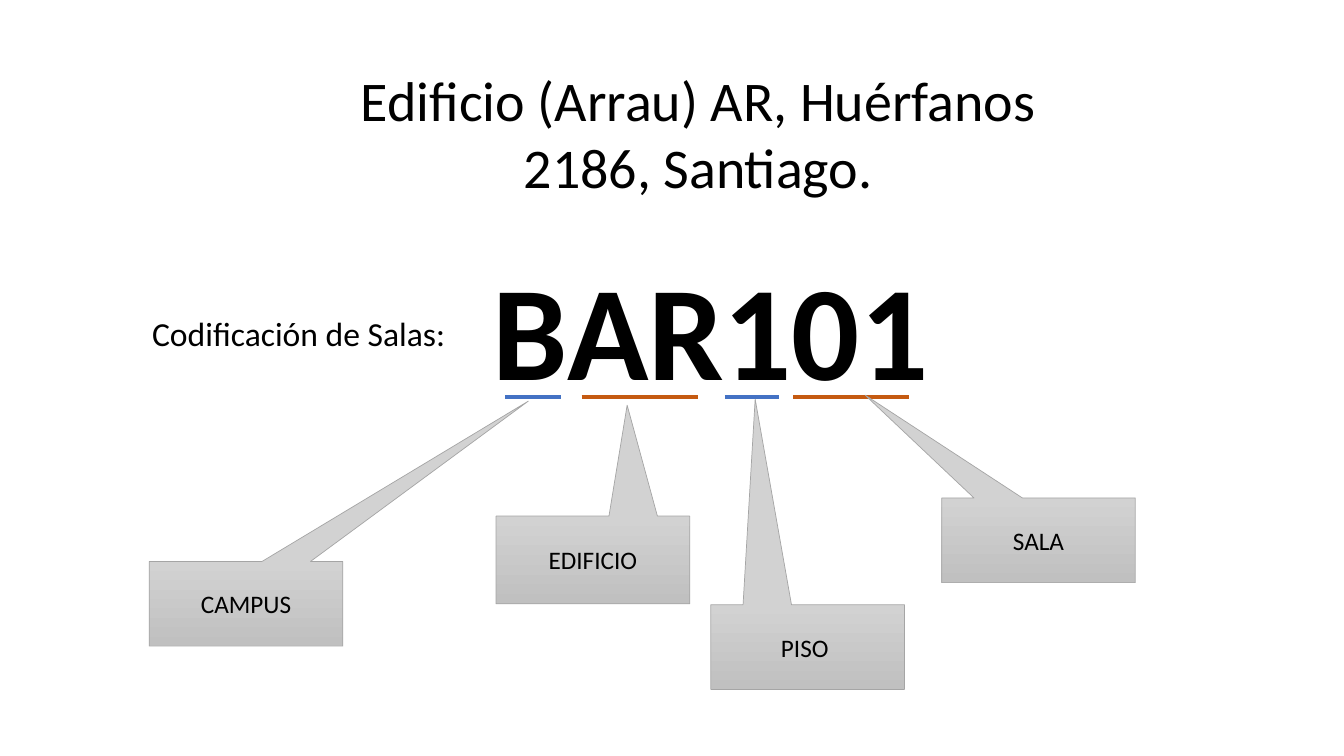
from lxml import etree
from pptx import Presentation
from pptx.dml.color import RGBColor
from pptx.enum.shapes import MSO_CONNECTOR as Connector, MSO_SHAPE as Shape
from pptx.enum.text import MSO_ANCHOR as Anchor, PP_ALIGN as Align
from pptx.oxml.ns import qn
from pptx.util import Emu, Pt

PX = 9144  # 100 px to the inch
SLIDE_SIZE = (1333, 750)
FONT = "Calibri"
BLACK = RGBColor(0x00, 0x00, 0x00)
BLUE = RGBColor(0x44, 0x72, 0xC4)
ORANGE = RGBColor(0xC5, 0x5A, 0x11)
LIGHT_GRAY = RGBColor(0xD2, 0xD2, 0xD2)
MID_GRAY = RGBColor(0xC0, 0xC0, 0xC0)
EDGE_GRAY = RGBColor(0xA5, 0xA5, 0xA5)

# Text, (left, top, width, height), font format
TITLE = ("Edificio (Arrau) AR, Huérfanos 2186, Santiago.", (314, 60, 757, 145), {"size": Pt(40)})
LABEL = ("Codificación de Salas: ", (117, 305, 366, 118), {"size": Pt(24)})
CODE = ("BAR101", (380, 239, 650, 172), {"size": Pt(96), "bold": True})

UNDERLINE_Y = 394
UNDERLINES = [(501, 556, BLUE), (577, 692, ORANGE), (719, 773, BLUE), (787, 902, ORANGE)]

# Text, (left, top, width, height), pointer tip
CALLOUTS = [
    ("CAMPUS", (148, 557, 192, 84), (524, 398)),
    ("EDIFICIO", (492, 512, 192, 87), (622, 402)),
    ("PISO ", (705, 600, 192, 84), (749, 396)),
    ("SALA", (934, 494, 192, 84), (858, 392)),
]


def px(*values):
    return [Emu(value * PX) for value in values]


def write(box, text, font_format):
    para = box.text_frame.paragraphs[0]
    para.alignment = Align.CENTER
    span = para.add_run()
    span.text = text
    span.font.name = FONT
    span.font.color.rgb = BLACK
    for name, value in font_format.items():
        setattr(span.font, name, value)
    return span


def add_text(shapes, text, place, font_format):
    box = shapes.add_textbox(*px(*place))
    box.text_frame.word_wrap = True
    return write(box, text, font_format)


def outline_white(span):
    """Give the letters a thin white edge."""
    properties = span.font._element
    edge = etree.Element(qn("a:ln"), w=str(Pt(0.75)))
    fill = etree.SubElement(edge, qn("a:solidFill"))
    etree.SubElement(fill, qn("a:srgbClr"), val="FFFFFF")
    properties.insert(0, edge)


def add_underline(shapes, start, end, color):
    line = shapes.add_connector(Connector.STRAIGHT, *px(start, UNDERLINE_Y, end, UNDERLINE_Y))
    line.line.color.rgb = color
    line.line.width = Pt(3)
    etree.SubElement(line._element.spPr, qn("a:effectLst"))


def add_callout(shapes, text, place, tip):
    left, top, width, height = place
    box = shapes.add_shape(Shape.RECTANGULAR_CALLOUT, *px(*place))
    box.adjustments[0] = (tip[0] - left) / width - 0.5
    box.adjustments[1] = (tip[1] - top) / height - 0.5
    box.shadow.inherit = False
    box.fill.gradient()
    box.fill.gradient_angle = 270
    for stop, color in zip(box.fill.gradient_stops, (LIGHT_GRAY, MID_GRAY)):
        stop.color.rgb = color
    box.line.color.rgb = EDGE_GRAY
    box.line.width = Pt(0.5)
    box.text_frame.vertical_anchor = Anchor.MIDDLE
    write(box, text, {"size": Pt(18)})


def main():
    deck = Presentation()
    deck.slide_width, deck.slide_height = px(*SLIDE_SIZE)
    page = deck.slides.add_slide(deck.slide_layouts[5])

    text, place, font_format = TITLE
    title = page.shapes.title
    title.left, title.top, title.width, title.height = px(*place)
    title.text_frame.vertical_anchor = Anchor.TOP
    write(title, text, font_format)

    add_text(page.shapes, *LABEL)
    code_group = page.shapes.add_group_shape()
    outline_white(add_text(code_group.shapes, *CODE))
    for underline in UNDERLINES:
        add_underline(code_group.shapes, *underline)
    for callout in CALLOUTS:
        add_callout(page.shapes, *callout)
    deck.save("out.pptx")


if __name__ == "__main__":
    main()
